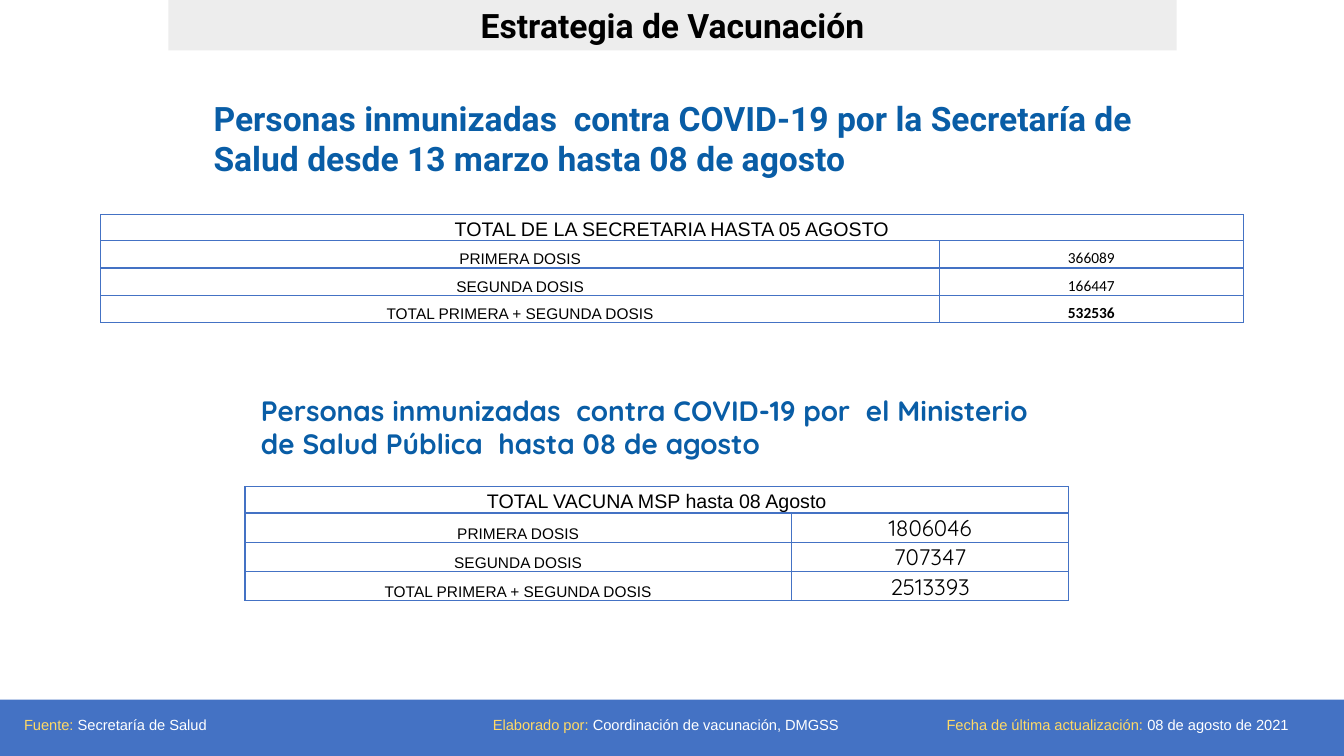
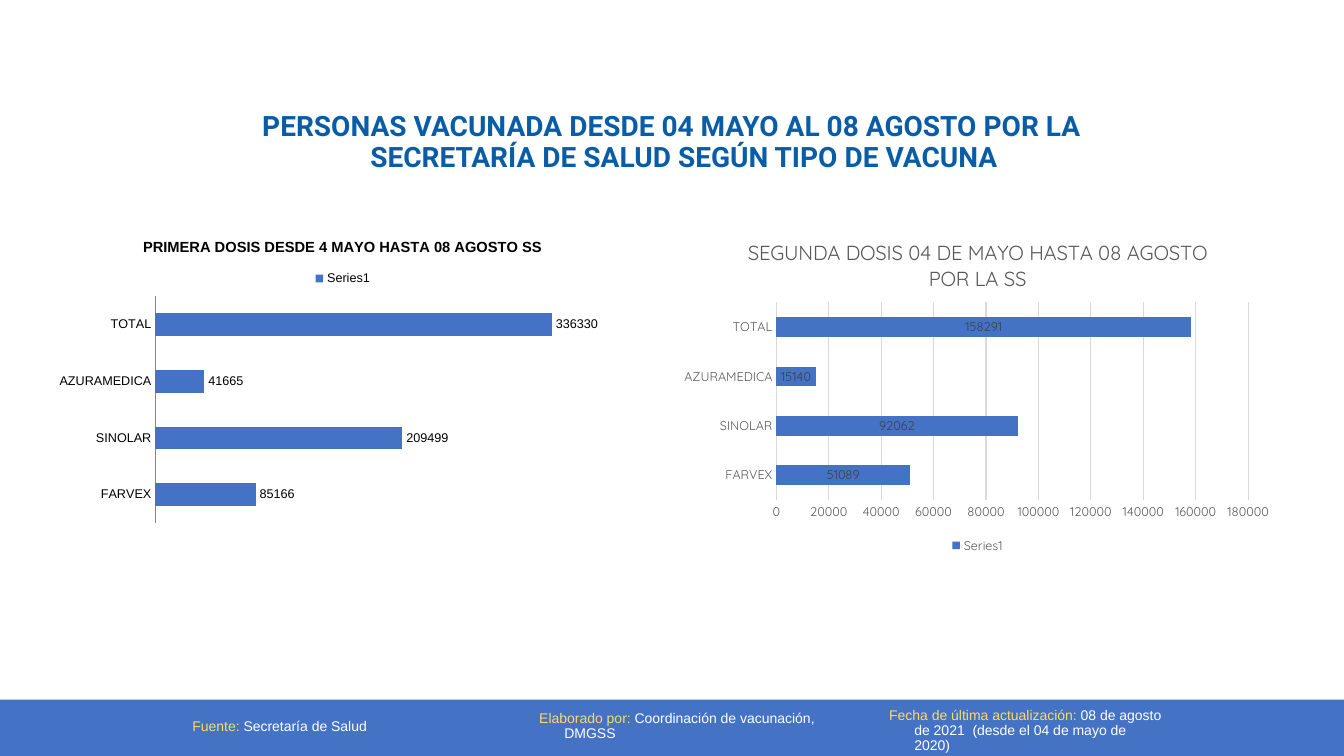
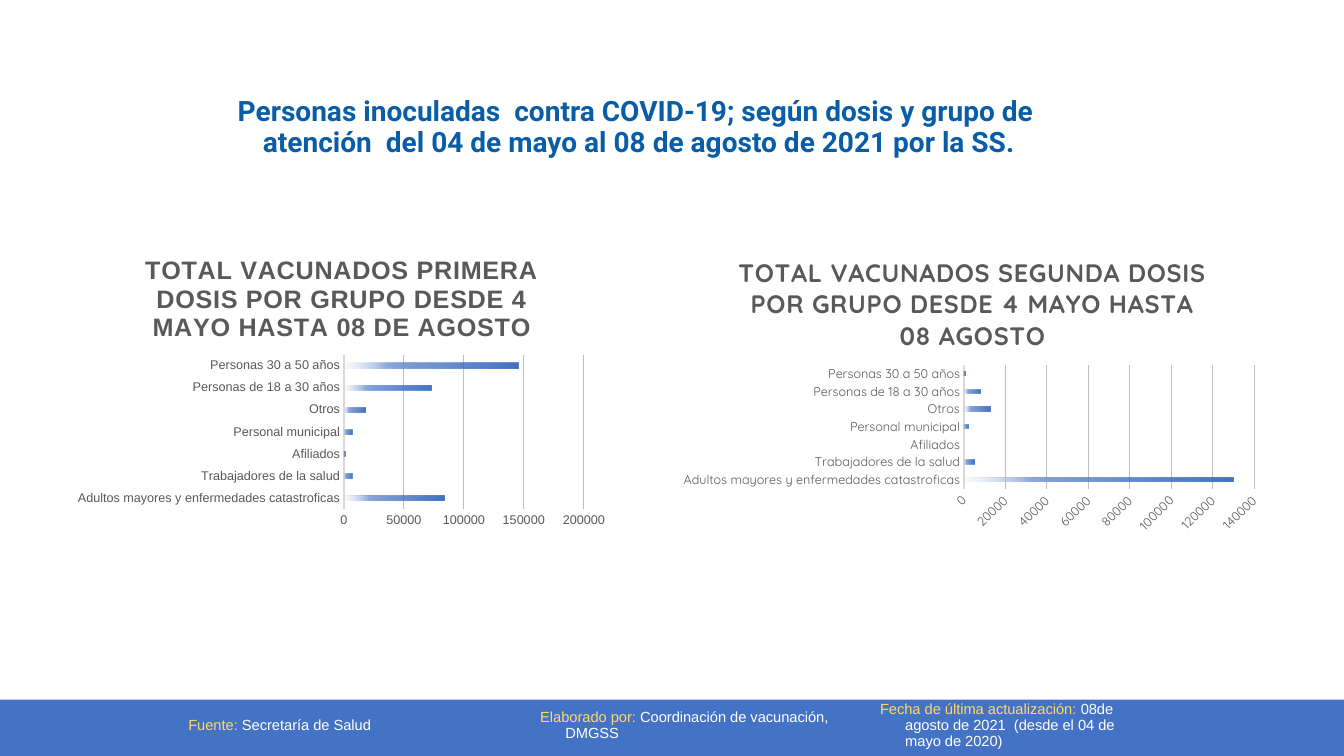
import pptx
import pptx.chart.data
import pptx.dml.color
import pptx.enum.chart
import pptx.enum.shapes
import pptx.enum.text
import pptx.oxml
import pptx.oxml.ns
import pptx.util

RGB = pptx.dml.color.RGBColor
Pt = pptx.util.Pt
ALIGN = pptx.enum.text.PP_ALIGN
ANCHOR = pptx.enum.text.MSO_ANCHOR
CHART = pptx.enum.chart.XL_CHART_TYPE
LEGEND = pptx.enum.chart.XL_LEGEND_POSITION
LABEL = pptx.enum.chart.XL_LABEL_POSITION
qn = pptx.oxml.ns.qn

BLUE = RGB(0x44, 0x72, 0xC4)
TITLE_BLUE = RGB(0x09, 0x5D, 0xA6)
GOLD = RGB(0xFF, 0xD9, 0x66)
WHITE = RGB(0xFF, 0xFF, 0xFF)
BLACK = RGB(0, 0, 0)
BANNER_GREY = RGB(0xED, 0xED, 0xED)
TEXT_GREY = RGB(0x59, 0x59, 0x59)
LABEL_GREY = RGB(0x40, 0x40, 0x40)
AXIS_GREY = RGB(0x86, 0x86, 0x86)
LIGHT_GREY = RGB(0xD9, 0xD9, 0xD9)
GRID_GREY = RGB(0xBF, 0xBF, 0xBF)

EMU_PER_PX = 9144  # 100 px to the inch
SLIDE_W, SLIDE_H = 1333, 750
BAND_TOP = 694
HANGING = 25

SOURCE = ("Fuente: ", "Secretaría de Salud")
AUTHOR = ("Elaborado por: ", "Coordinación de vacunación, DMGSS")
UPDATED = "Fecha de última actualización: "

# Each footer: size, then (left, top, width, (label, value))
FOOTERS = [
    (10.5, [(14, 700, 432, SOURCE), (479, 700, 432, AUTHOR),
            (929, 700, 389, (UPDATED, "08 de agosto de 2021"))]),
    (10, [(181, 701, 324, SOURCE), (525, 701, 324, AUTHOR),
          (872, 705, 292, (UPDATED, "08 de agosto de 2021  (desde el 04 de mayo de 2020)"))]),
    (10.5, [(177, 700, 324, SOURCE), (526, 700, 324, AUTHOR),
            (863, 700, 292, (UPDATED, "08de agosto de 2021  (desde el 04 de mayo de 2020)"))]),
]

BANNER = "Estrategia de Vacunación"
# Each title: box, words, font, size, alignment, hanging indent
TITLES = [
    [((202, 92, 947, 91),
      "Personas inmunizadas  contra COVID-19 por la Secretaría de Salud desde 13 marzo hasta 08 de agosto",
      "Roboto", 24, ALIGN.LEFT, False),
     ((249, 385, 803, 77),
      "Personas inmunizadas  contra COVID-19 por  el Ministerio de Salud Pública  hasta 08 de agosto",
      "Quicksand", 20, ALIGN.LEFT, False)],
    [((241, 107, 850, 87),
      "PERSONAS VACUNADA DESDE 04 MAYO AL 08 AGOSTO POR LA SECRETARÍA DE SALUD SEGÚN TIPO DE VACUNA",
      "Roboto", 20, ALIGN.CENTER, True)],
    [((226, 92, 923, 82),
      "Personas inoculadas  contra COVID-19; según dosis y grupo de atención  del 04 de mayo al 08 de agosto de 2021 por la SS.",
      "Roboto", 20, ALIGN.LEFT, True)],
]

DOSES = ["PRIMERA DOSIS", "SEGUNDA DOSIS", "TOTAL PRIMERA + SEGUNDA DOSIS"]
DOSE_TABLES = [
    dict(at=(100, 213), columns=(832, 301), head_height=26, row_height=27,
         heading="TOTAL DE LA SECRETARIA HASTA 05 AGOSTO",
         counts=["366089", "166447", "532536"], font="Calibri", size=11, bold_total=True),
    dict(at=(243, 483), columns=(542, 275), head_height=26, row_height=29,
         heading="TOTAL VACUNA MSP hasta 08 Agosto",
         counts=["1806046", "707347", "2513393"], font="Quicksand", size=16, bold_total=False),
]

VACCINES = ["FARVEX", "SINOLAR", "AZURAMEDICA", "TOTAL"]
GROUPS = ["Adultos mayores y enfermedades catastroficas", "Trabajadores de la salud",
          "Afiliados", "Personal municipal", "Otros", "Personas de 18 a 30 años",
          "Personas 30 a 50 años"]
# Gradient stops: position %, colour, opacity %
FADE = [(0, "4472C4", 100), (51, "4472C4", 75), (75, "8FAADC", 100), (100, "DAE3F3", 15)]

BY_GROUP = dict(kind=CHART.BAR_CLUSTERED, categories=GROUPS, series="Series 1",
                gap=326, overlap=-58, fade=True, color=TEXT_GREY,
                title_size=18, title_bold=True, title_spacing=50,
                axis_line=(LIGHT_GREY, 1.5), grid=GRID_GREY)
BY_VACCINE = dict(categories=VACCINES, series="Series1", gap=150)

VACCINE_CHARTS = [
    dict(BY_VACCINE, at=(47, 221, 586, 304), plot=(154, 294, 468, 225), font="Arial",
         kind=CHART.BAR_CLUSTERED, overlap=-25, color=BLACK,
         title="PRIMERA DOSIS DESDE 4 MAYO HASTA 08 AGOSTO SS", title_size=10.5, title_bold=True,
         values=[85166, 209499, 41665, 336330], scale=(400000, 50000),
         axis_line=(AXIS_GREY, 0.75), legend=LEGEND.TOP,
         labels=(LABEL.OUTSIDE_END, BLACK)),
    dict(BY_VACCINE, at=(667, 221, 605, 332), plot=(770, 300, 468, 196), font="Quicksand",
         kind=CHART.BAR_STACKED, overlap=100, color=TEXT_GREY,
         title="SEGUNDA DOSIS 04 DE MAYO HASTA 08 AGOSTO POR LA SS", title_size=14.5, title_bold=False,
         values=[51089, 92062, 15140, 158291], scale=(180000, 20000),
         axis_line=(LIGHT_GREY, 0.75), grid=LIGHT_GREY, legend=LEGEND.BOTTOM,
         labels=(LABEL.CENTER, LABEL_GREY)),
]
GROUP_CHARTS = [
    dict(BY_GROUP, at=(67, 236, 544, 294), plot=(341, 352, 238, 153), font="Arial",
         title="TOTAL VACUNADOS PRIMERA DOSIS POR GRUPO DESDE 4 MAYO HASTA 08 DE AGOSTO",
         values=[84000, 7000, 1000, 7000, 18000, 73000, 146000], scale=(200000, 50000)),
    dict(BY_GROUP, at=(666, 236, 597, 299), plot=(956, 362, 288, 123), font="Quicksand",
         title="TOTAL VACUNADOS SEGUNDA DOSIS POR GRUPO DESDE 4 MAYO HASTA 08 AGOSTO",
         values=[130000, 5000, 0, 2000, 13000, 8000, 1000], scale=(140000, 20000),
         tick_angle=-45),
]


def px(*lengths):
    return [pptx.util.Emu(length * EMU_PER_PX) for length in lengths]


def style(font, name, size, color, bold=False):
    font.name, font.size, font.bold = name, Pt(size), bold
    font.color.rgb = color


def hang(paragraph):
    """Give body text its hanging indent and tight lines."""
    indent = px(HANGING)[0]
    properties = paragraph._p.get_or_add_pPr()
    properties.set("marL", str(indent))
    properties.set("indent", str(-indent))
    paragraph.line_spacing = 0.9


def add_bar(slide, box, color):
    bar = slide.shapes.add_shape(pptx.enum.shapes.MSO_SHAPE.RECTANGLE, *px(*box))
    bar.shadow.inherit = False
    bar.fill.solid()
    bar.fill.fore_color.rgb = color
    bar.line.fill.background()
    return bar


def add_frame(slide, box):
    frame = slide.shapes.add_textbox(*px(*box)).text_frame
    frame.word_wrap = True
    return frame


def add_footer(slide, size, notes):
    add_bar(slide, (0, BAND_TOP, SLIDE_W, SLIDE_H - BAND_TOP), BLUE)
    for left, top, width, words in notes:
        frame = add_frame(slide, (left, top, width, 40))
        frame.margin_top = frame.margin_bottom = 0
        frame.vertical_anchor = ANCHOR.MIDDLE
        paragraph = frame.paragraphs[0]
        hang(paragraph)
        for part, color in zip(words, (GOLD, WHITE)):
            run = paragraph.add_run()
            run.text = part
            style(run.font, "Arial", size, color)


def add_title(slide, box, words, font, size, alignment, hanging):
    paragraph = add_frame(slide, box).paragraphs[0]
    paragraph.text = words
    paragraph.alignment = alignment
    if hanging:
        hang(paragraph)
    style(paragraph.runs[0].font, font, size, TITLE_BLUE, True)


def add_banner(slide):
    frame = add_bar(slide, (167, 0, 1000, 50), BANNER_GREY).text_frame
    frame.text = BANNER
    frame.paragraphs[0].alignment = ALIGN.CENTER
    style(frame.paragraphs[0].runs[0].font, "Roboto", 24, BLACK, True)


def outline_cell(cell):
    properties = cell._tc.get_or_add_tcPr()
    for position, side in enumerate(("lnL", "lnR", "lnT", "lnB")):
        properties.insert(position, pptx.oxml.parse_xml(
            f'<a:{side} {pptx.oxml.ns.nsdecls("a")} w="12700"><a:solidFill>'
            f'<a:srgbClr val="{BLUE}"/></a:solidFill></a:{side}>'))


def fill_cell(cell, words, font, size, bold=False):
    cell.text = words
    cell.vertical_anchor = ANCHOR.BOTTOM
    cell.margin_left = cell.margin_right = cell.margin_top = px(1)[0]
    cell.margin_bottom = 0
    paragraph = cell.text_frame.paragraphs[0]
    paragraph.alignment = ALIGN.CENTER
    for run in paragraph.runs:
        style(run.font, font, size, BLACK, bold)


def add_dose_table(slide, at, columns, head_height, row_height, heading, counts,
                   font, size, bold_total):
    heights = [head_height] + [row_height] * len(DOSES)
    table = slide.shapes.add_table(len(heights), len(columns),
                                   *px(*at, sum(columns), sum(heights))).table
    table.first_row = table.horz_banding = False
    for column, width in zip(table.columns, px(*columns)):
        column.width = width
    for row, height in zip(table.rows, px(*heights)):
        row.height = height
    for cell in table.iter_cells():
        cell.fill.background()
        outline_cell(cell)
    table.cell(0, 0).merge(table.cell(0, 1))
    fill_cell(table.cell(0, 0), heading, "Arial", 14)
    for index, (dose, count) in enumerate(zip(DOSES, counts), 1):
        fill_cell(table.cell(index, 0), dose, "Arial", 11)
        fill_cell(table.cell(index, 1), count, font, size, bold_total and index == len(DOSES))


def place_plot(chart, box, plot):
    """Fix the inner plot area, given in slide px."""
    left, top, width, height = box
    shares = dict(x=(plot[0] - left) / width, y=(plot[1] - top) / height,
                  w=plot[2] / width, h=plot[3] / height)
    area = chart._chartSpace.chart.plotArea
    for old in area.findall(qn("c:layout")):
        area.remove(old)
    values = "".join(f'<c:{key} val="{share:.4f}"/>' for key, share in shares.items())
    area.insert(0, pptx.oxml.parse_xml(
        f'<c:layout {pptx.oxml.ns.nsdecls("c")}><c:manualLayout><c:layoutTarget val="inner"/>'
        f'<c:xMode val="edge"/><c:yMode val="edge"/>{values}</c:manualLayout></c:layout>'))


def fade_bars(series):
    stops = "".join(
        f'<a:gs pos="{position * 1000}"><a:srgbClr val="{color}">'
        f'<a:alpha val="{opacity * 1000}"/></a:srgbClr></a:gs>'
        for position, color, opacity in FADE)
    series.format.fill.background()
    properties = series._element.find(qn("c:spPr"))
    properties.replace(properties.find(qn("a:noFill")), pptx.oxml.parse_xml(
        f'<a:gradFill {pptx.oxml.ns.nsdecls("a")}><a:gsLst>{stops}</a:gsLst>'
        '<a:lin ang="10800000" scaled="0"/></a:gradFill>'))


def style_axes(chart, look):
    no_tick = pptx.enum.chart.XL_TICK_MARK.NONE
    categories, values = chart.category_axis, chart.value_axis
    for axis in (categories, values):
        axis.major_tick_mark = axis.minor_tick_mark = no_tick
        style(axis.tick_labels.font, look["font"], 9, look["color"])
    color, width = look["axis_line"]
    categories.format.line.color.rgb = color
    categories.format.line.width = Pt(width)
    categories.has_major_gridlines = False

    values.minimum_scale = 0
    values.maximum_scale, values.major_unit = look["scale"]
    values.format.line.fill.background()
    grid = look.get("grid")
    values.has_major_gridlines = values.visible = grid is not None
    if grid is not None:
        values.major_gridlines.format.line.color.rgb = grid
        values.major_gridlines.format.line.width = Pt(0.75)
    if "tick_angle" in look:
        body = values._element.find(qn("c:txPr")).find(qn("a:bodyPr"))
        body.set("rot", str(look["tick_angle"] * 60000))
        body.set("vert", "horz")


def add_bar_chart(slide, look):
    data = pptx.chart.data.CategoryChartData()
    data.categories = look["categories"]
    data.add_series(look["series"], look["values"])
    chart = slide.shapes.add_chart(look["kind"], *px(*look["at"]), data).chart
    style(chart.font, look["font"], 9, look["color"])

    chart.has_title = True
    chart.chart_title.include_in_layout = False
    heading = chart.chart_title.text_frame
    heading.text = look["title"]
    run = heading.paragraphs[0].runs[0]
    style(run.font, look["font"], look["title_size"], look["color"], look["title_bold"])
    run._r.get_or_add_rPr().set("spc", str(look.get("title_spacing", 0)))

    bars = chart.plots[0]
    bars.gap_width, bars.overlap = look["gap"], look["overlap"]
    bars.vary_by_categories = False
    series = bars.series[0]
    if look.get("fade"):
        fade_bars(series)
    else:
        series.format.fill.solid()
        series.format.fill.fore_color.rgb = BLUE
    if "labels" in look:
        bars.has_data_labels = True
        labels = bars.data_labels
        labels.show_value = True
        labels.position, color = look["labels"]
        style(labels.font, look["font"], 9, color)

    chart.has_legend = "legend" in look
    if chart.has_legend:
        chart.legend.position = look["legend"]
        chart.legend.include_in_layout = False
        style(chart.legend.font, look["font"], 9, look["color"])
    style_axes(chart, look)
    place_plot(chart, look["at"], look["plot"])


def main():
    deck = pptx.Presentation()
    deck.slide_width, deck.slide_height = px(SLIDE_W, SLIDE_H)
    slides = []
    for (size, notes), titles in zip(FOOTERS, TITLES):
        slide = deck.slides.add_slide(deck.slide_layouts[6])
        add_footer(slide, size, notes)
        for title in titles:
            add_title(slide, *title)
        slides.append(slide)

    totals, by_vaccine, by_group = slides
    add_banner(totals)
    for table in DOSE_TABLES:
        add_dose_table(totals, **table)
    for slide, charts in ((by_vaccine, VACCINE_CHARTS), (by_group, GROUP_CHARTS)):
        for look in charts:
            add_bar_chart(slide, look)
    deck.save("out.pptx")


if __name__ == "__main__":
    main()
